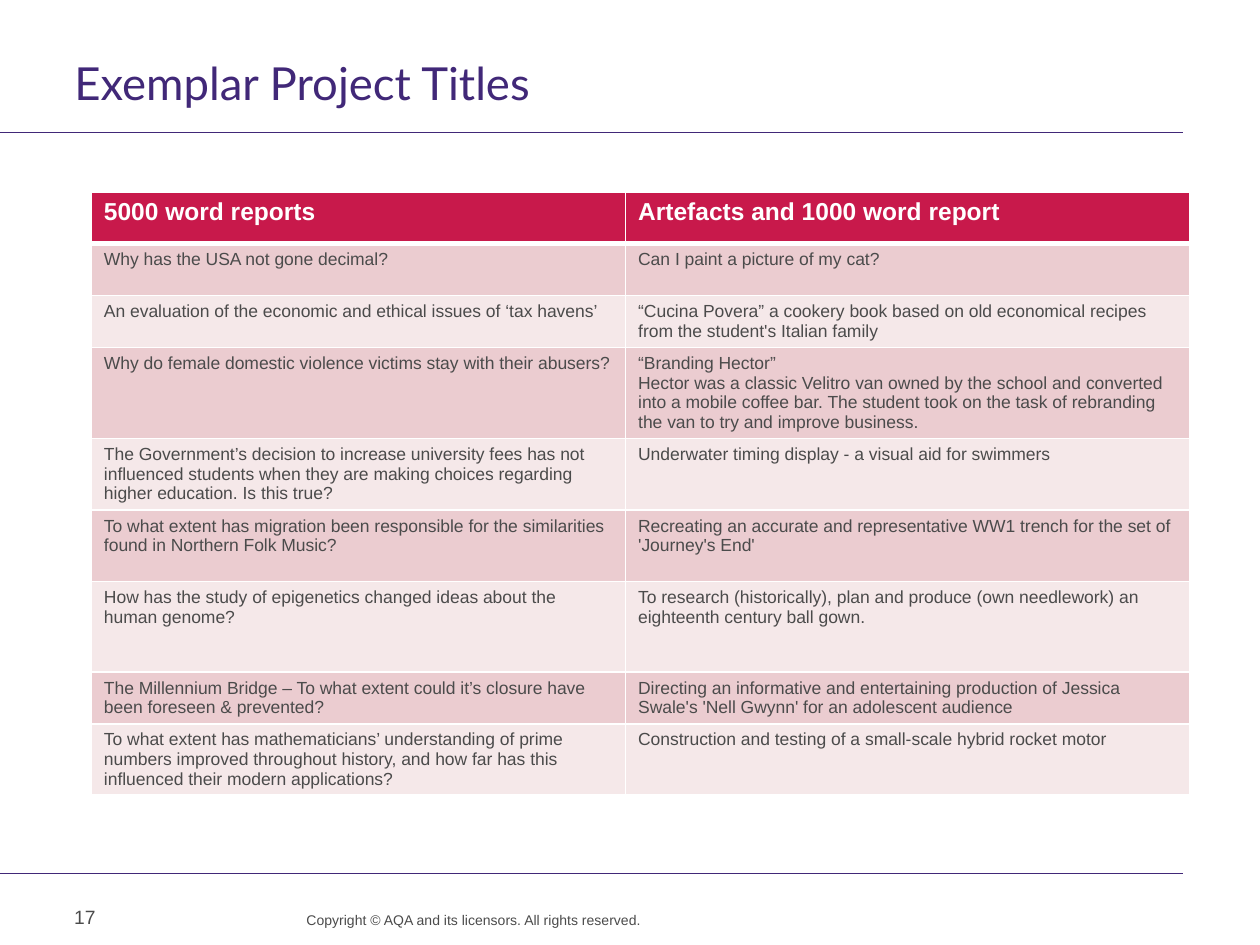
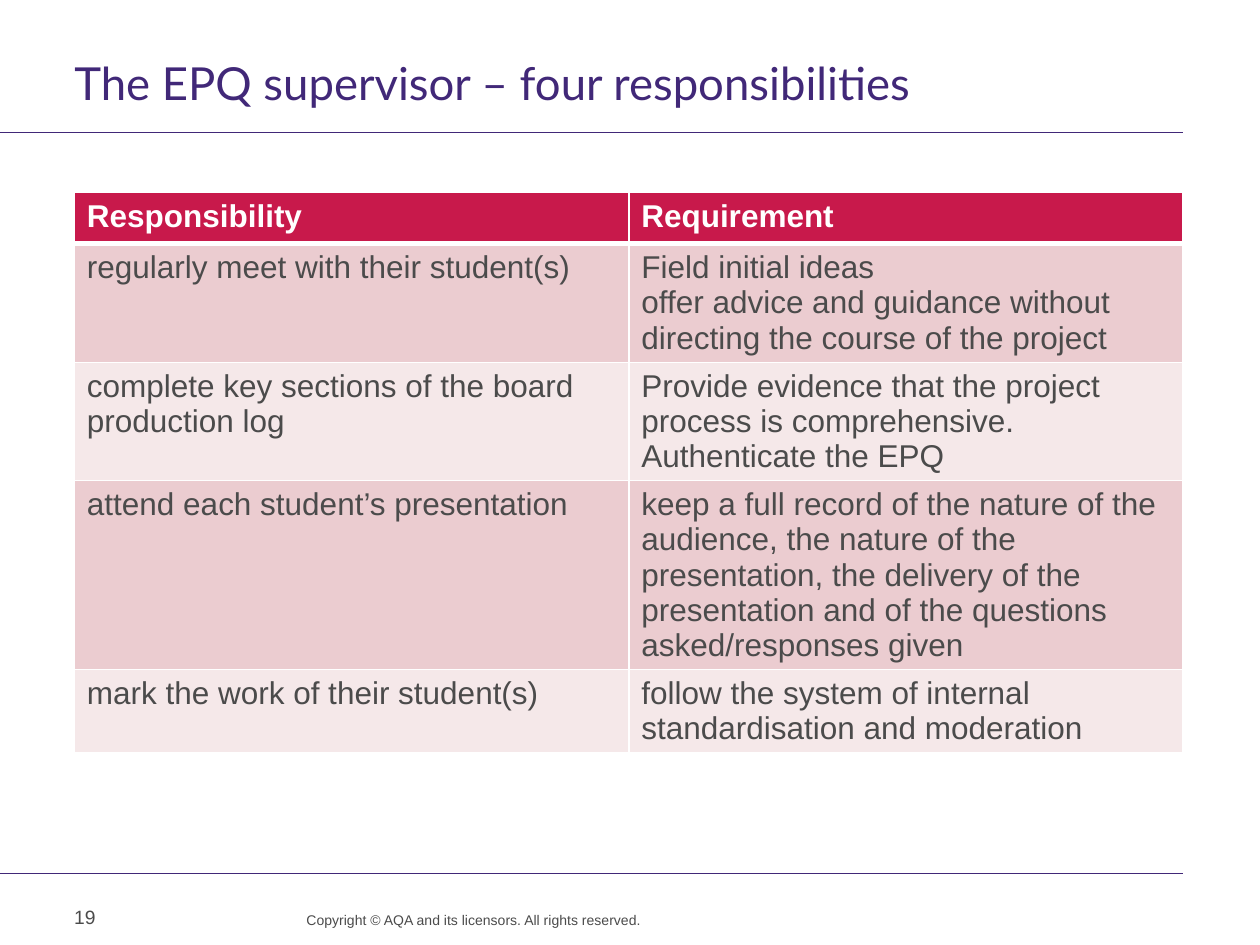
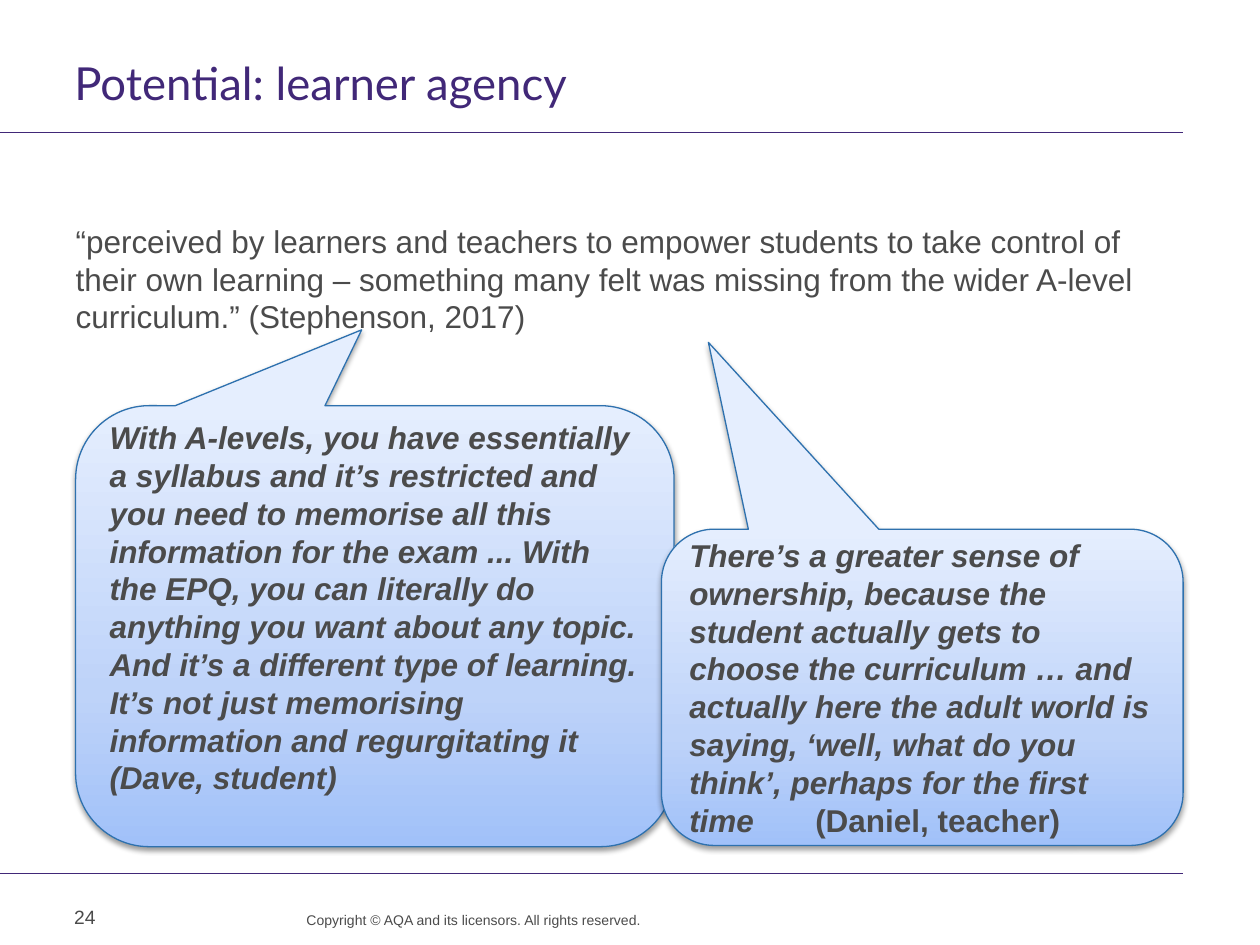
from lxml.etree import SubElement
from pptx import Presentation
from pptx.dml.color import RGBColor
from pptx.enum.shapes import MSO_CONNECTOR as Connector, MSO_SHAPE as Shape
from pptx.enum.text import MSO_ANCHOR as Anchor, PP_ALIGN as Align
from pptx.oxml import parse_xml
from pptx.oxml.ns import nsdecls, qn
from pptx.util import Emu, Inches, Pt

# Grid of 100 columns by 75 rows on a 10 x 7.5 inch page
WIDTH, HEIGHT = Inches(10), Inches(7.5)
COLUMNS, ROWS = 100, 75

PURPLE, CRIMSON, GREY, WHITE = "412878", "C8194B", "4B4B4B", "FFFFFF"
BANDS = ("EBCCD0", "F5E8E9")
CALLOUT_LINE = "2E71AE"
CALLOUT_STOPS = ((0, "A1C1F9"), (35, "BED3F9"), (100, "E5EEFE"))
BODY_FONT, TITLE_FONT = "Arial", "Lato"
COPYRIGHT = "Copyright © AQA and its licensors. All rights reserved."
TABLE_TOP, TABLE_LEADING = 15.25, 1.12
DEFAULT_INSETS = (1, 0.5, 1, 0.5)


def color(value):
    return RGBColor.from_string(value)


def across(columns):
    return Emu(round(WIDTH * columns / COLUMNS))


def down(rows):
    return Emu(round(HEIGHT * rows / ROWS))


class Deck:
    """Holds the shared style and the page being drawn."""

    def __init__(self):
        self.deck = Presentation()
        self.deck.slide_width, self.deck.slide_height = WIDTH, HEIGHT
        self.page = None

    def new_page(self, title, number):
        self.page = self.deck.slides.add_slide(self.deck.slide_layouts[6])
        for row in (10.5, 69.3):
            self.rule(row)
        self.text(title, (5.9, 4.8, 88, 4.7), 26, ink=PURPLE, font=TITLE_FONT,
                  spacing=Pt(28), insets=(0, 0, 1, 0))
        self.text(str(number), (4.9, 70.8, 7.6, 4), 11, anchor=Anchor.MIDDLE)
        self.text(COPYRIGHT, (21.6, 72.25, 29.3, 2.6), 8, align=Align.RIGHT,
                  spacing=Pt(10), insets=(0, 0, 0, 0))

    def rule(self, row):
        line = self.page.shapes.add_connector(
            Connector.STRAIGHT, 0, down(row), across(93.9), down(row))
        line.line.color.rgb = color(PURPLE)
        line.line.width = Pt(0.6)
        SubElement(line._element.spPr, qn("a:effectLst"))

    def place(self, area):
        left, top, width, height = area
        return across(left), down(top), across(width), down(height)

    def style(self, frame, size, ink=GREY, font=BODY_FONT, bold=False,
              italic=False, align=Align.LEFT, spacing=None):
        for paragraph in frame.paragraphs:
            paragraph.alignment = align
            paragraph.line_spacing = spacing
            for span in paragraph.runs:
                span.font.size = Pt(size)
                span.font.name = font
                span.font.bold, span.font.italic = bold, italic
                span.font.color.rgb = color(ink)

    def frame(self, frame, insets, anchor):
        frame.word_wrap = True
        frame.vertical_anchor = anchor
        left, top, right, bottom = insets
        frame.margin_left, frame.margin_right = across(left), across(right)
        frame.margin_top, frame.margin_bottom = down(top), down(bottom)

    def text(self, words, area, size, insets=DEFAULT_INSETS,
             anchor=Anchor.TOP, **look):
        box = self.page.shapes.add_textbox(*self.place(area))
        self.frame(box.text_frame, insets, anchor)
        box.text_frame.text = words
        self.style(box.text_frame, size, **look)

    def table(self, left, widths, heights, cells, head_size, body_size):
        area = (left, TABLE_TOP, sum(widths), sum(heights))
        table = self.page.shapes.add_table(
            len(heights), len(widths), *self.place(area)).table
        table.horz_banding = False
        for column, width in zip(table.columns, widths):
            column.width = across(width)
        for row, height in zip(table.rows, heights):
            row.height = down(height)
        for index, words in enumerate(cells):
            head = index == 0
            size = head_size if head else body_size
            for cell, content in zip(table.rows[index].cells, words):
                cell.text_frame.text = content
                self.style(cell.text_frame, size, bold=head,
                           ink=WHITE if head else GREY,
                           spacing=Pt(size * TABLE_LEADING))
                self.borders(cell, top=3 if index == 1 else 1,
                             bottom=3 if head else 1)
                cell.fill.solid()
                cell.fill.fore_color.rgb = color(
                    CRIMSON if head else BANDS[(index - 1) % 2])

    def borders(self, cell, top, bottom):
        properties = cell._tc.get_or_add_tcPr()
        for side, points in zip("LRTB", (1, 1, top, bottom)):
            edge = SubElement(properties, qn(f"a:ln{side}"), w=str(Pt(points)))
            fill = SubElement(edge, qn("a:solidFill"))
            SubElement(fill, qn("a:srgbClr"), val=WHITE)

    def callout(self, area, pointer, quote, speaker="", bottom=0.5):
        shape = self.page.shapes.add_shape(
            Shape.ROUNDED_RECTANGULAR_CALLOUT, *self.place(area))
        for index, value in enumerate((*pointer, 0.167)):
            shape.adjustments[index] = value
        shape.line.color.rgb = color(CALLOUT_LINE)
        shape.line.width = Pt(0.75)

        # Three-stop gradient, rising from the bottom edge
        shape.fill.gradient()
        shape.fill.gradient_angle = 90
        stops = shape._element.spPr.find(f".//{qn('a:gsLst')}")
        for stop in list(stops):
            stops.remove(stop)
        for share, tint in CALLOUT_STOPS:
            stop = SubElement(stops, qn("a:gs"), pos=str(share * 1000))
            SubElement(stop, qn("a:srgbClr"), val=tint)

        # Soft shadow below
        shape.shadow.inherit = False
        effects = shape._element.spPr.find(qn("a:effectLst"))
        effects.append(parse_xml(
            f'<a:outerShdw {nsdecls("a")} blurRad="{Pt(3.1)}" '
            f'dist="{Pt(1.6)}" dir="5400000" rotWithShape="0">'
            '<a:srgbClr val="000000"><a:alpha val="38000"/></a:srgbClr>'
            '</a:outerShdw>'))

        frame = shape.text_frame
        self.frame(frame, (1, 0.5, 1, bottom), Anchor.MIDDLE)
        frame.text = quote
        if speaker:
            frame.paragraphs[0].add_run().text = speaker
        self.style(frame, 18, bold=True, italic=True)
        if speaker:
            frame.paragraphs[0].runs[-1].font.italic = False


PROJECTS = (
    ("5000 word reports", "Artefacts and 1000 word report"),
    ("Why has the USA not gone decimal?", "Can I paint a picture of my cat?"),
    ("An evaluation of the economic and ethical issues of ‘tax havens’",
     "“Cucina Povera” a cookery book based on old economical recipes from "
     "the student's Italian family"),
    ("Why do female domestic violence victims stay with their abusers?",
     "“Branding Hector”\nHector was a classic Velitro van owned by the school "
     "and converted into a mobile coffee bar. The student took on the task of "
     "rebranding the van to try and improve business."),
    ("The Government’s decision to increase university fees has not "
     "influenced students when they are making choices regarding higher "
     "education. Is this true?",
     "Underwater timing display - a visual aid for swimmers"),
    ("To what extent has migration been responsible for the similarities "
     "found in Northern Folk Music?",
     "Recreating an accurate and representative WW1 trench for the set of "
     "'Journey's End'"),
    ("How has the study of epigenetics changed ideas about the human genome?",
     "To research (historically), plan and produce (own needlework) an "
     "eighteenth century ball gown."),
    ("The Millennium Bridge – To what extent could it’s closure have been "
     "foreseen & prevented?",
     "Directing an informative and entertaining production of Jessica "
     "Swale's 'Nell Gwynn' for an adolescent audience"),
    ("To what extent has mathematicians’ understanding of prime numbers "
     "improved throughout history, and how far has this influenced their "
     "modern applications?",
     "Construction and testing of a small-scale hybrid rocket motor"),
)

DUTIES = (
    ("Responsibility", "Requirement"),
    ("regularly meet with their student(s)",
     "Field initial ideas\noffer advice and guidance without directing the "
     "course of the project"),
    ("complete key sections of the board production log",
     "Provide evidence that the project process is comprehensive. "
     "Authenticate the EPQ"),
    ("attend each student’s presentation",
     "keep a full record of the nature of the audience, the nature of the "
     "presentation, the delivery of the presentation and of the questions "
     "asked/responses given"),
    ("mark the work of their student(s)",
     "follow the system of internal standardisation and moderation"),
)


def main():
    deck = Deck()

    # Project titles
    deck.new_page("Exemplar Project Titles", 17)
    deck.table(7.25, (42.4, 44.8),
               (4.1, 4.1, 4.1, 7.2, 5.7, 5.65, 7.2, 4.1, 5.65),
               PROJECTS, 14, 10)

    # Supervisor duties
    deck.new_page("The EPQ supervisor – four responsibilities", 19)
    deck.table(5.9, (44, 44), (4.1, 9.4, 9.4, 15, 6.6), DUTIES, 18, 18)

    # Learner agency quotes
    deck.new_page("Potential: learner agency", 24)
    deck.text("“perceived by learners and teachers to empower students to take "
              "control of their own learning – something many felt was missing "
              "from the wider A-level curriculum.” (Stephenson, 2017)",
              (6, 17.6, 88, 48.2), 18, insets=(0, 0, 1, 0))
    deck.callout((6, 32.2, 47.5, 35), (-0.022, -0.672),
                 "With A-levels, you have essentially a syllabus and it’s "
                 "restricted and you need to memorise all this information for "
                 "the exam ... With the EPQ, you can literally do anything you "
                 "want about any topic. And it’s a different type of learning. "
                 "It’s not just memorising information and regurgitating it "
                 "(Dave, student)", bottom=3.5)
    deck.callout((52.5, 42, 41.4, 25.1), (-0.41, -1.091),
                 "There’s a greater sense of ownership, because the student "
                 "actually gets to choose the curriculum … and actually here "
                 "the adult world is saying, ‘well, what do you think’, "
                 "perhaps for the first time\t", speaker="(Daniel, teacher)")

    deck.deck.save("out.pptx")


if __name__ == "__main__":
    main()
